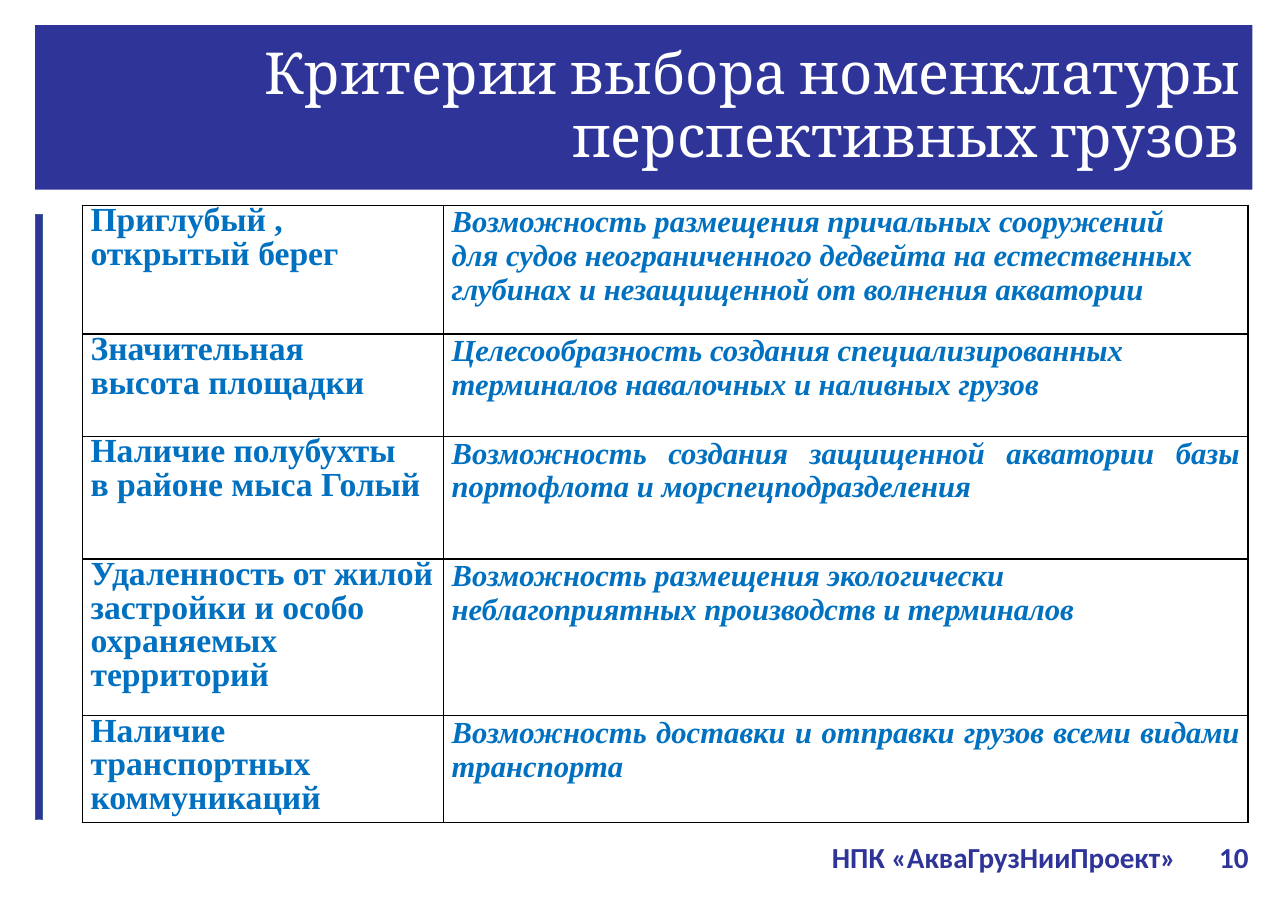
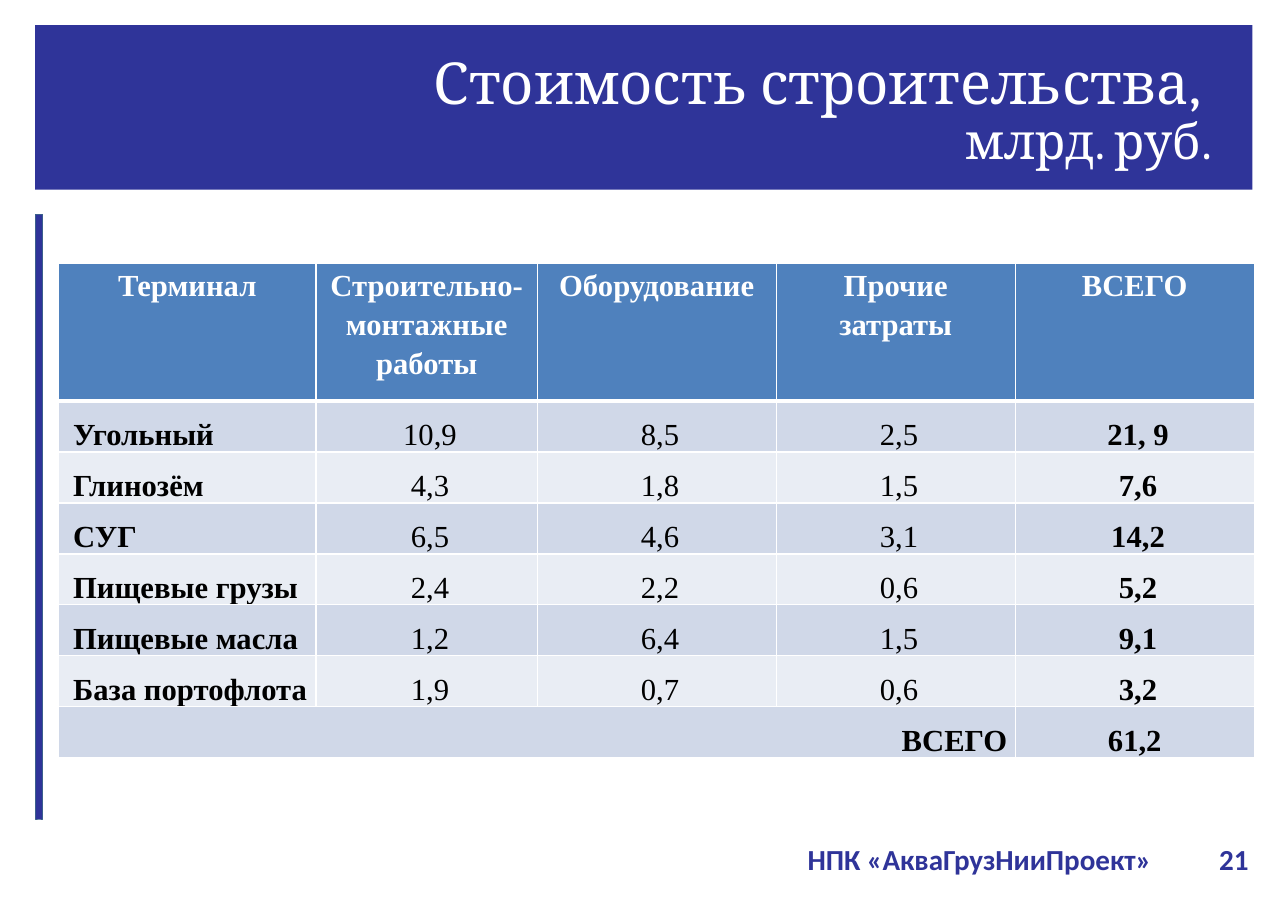
import dataclasses

import pptx
import pptx.dml.color
import pptx.enum.shapes
import pptx.enum.text
import pptx.oxml
import pptx.oxml.ns
import pptx.util

Pt = pptx.util.Pt
ALIGN = pptx.enum.text.PP_ALIGN
ANCHOR = pptx.enum.text.MSO_ANCHOR


@dataclasses.dataclass(frozen=True)
class Theme:
    # Colours
    brand: str = "2F3499"
    bar_edge: str = "3A5F8C"
    white: str = "FFFFFF"
    black: str = "000000"
    criteria: str = "0070C0"
    header: str = "4F81BD"
    bands: tuple = ("D0D8E8", "E9EDF4")
    # Fonts
    title_font: str = "Cambria"
    table_font: str = "Times New Roman"
    footer_font: str = "Calibri"
    # Type sizes
    title_size: float = 37.8
    subtitle_size: float = 32.4
    criterion_size: float = 22
    table_size: float = 20
    footer_size: float = 19


THEME = Theme()
ORGANISATION = "НПК «АкваГрузНииПроект»"


def rgb(color):
    return pptx.dml.color.RGBColor.from_string(color)


def write_text(frame, *paragraphs, font, size, color, bold=False, italic=False,
               align=ALIGN.LEFT, spacing=None, after=None, tabs=()):
    """Fill a frame; a paragraph is a string or a list of (text, size) lines."""
    for number, content in enumerate(paragraphs):
        paragraph = frame.paragraphs[0] if number == 0 else frame.add_paragraph()
        paragraph.alignment = align
        if spacing is not None:
            paragraph.line_spacing = spacing
        if after is not None:
            paragraph.space_after = Pt(after)
        if tabs:
            stops = "".join(f'<a:tab pos="{Pt(stop)}" algn="r"/>' for stop in tabs)
            paragraph._p.get_or_add_pPr().append(pptx.oxml.parse_xml(
                f'<a:tabLst {pptx.oxml.ns.nsdecls("a")}>{stops}</a:tabLst>'))
        lines = [(content, size)] if isinstance(content, str) else content
        for position, (line, line_size) in enumerate(lines):
            if position:
                paragraph.add_line_break()
            run = paragraph.add_run()
            run.text = line
            run.font.name = font
            run.font.size = Pt(line_size)
            run.font.color.rgb = rgb(color)
            run.font.bold = bold
            run.font.italic = italic


class Deck:
    def __init__(self, theme):
        self.theme = theme
        self.presentation = pptx.Presentation()
        self.presentation.slide_width = Pt(841.7)
        self.presentation.slide_height = Pt(595.4)
        self.layout = self.presentation.slide_layouts[5]
        self.slide = None

    def new_slide(self):
        first = self.slide is None
        self.slide = self.presentation.slides.add_slide(self.layout)
        if first:
            self.decorate_layout()

    def decorate_layout(self):
        """Place the title band and the side bar on the shared layout."""
        band = self.rectangle(23, 16.5, 795.5, 107.5)
        bar = self.rectangle(23.3, 140, 4.5, 395.3, edge=self.theme.bar_edge)
        for ornament in (bar, band):
            self.layout.shapes.element.insert(2, ornament.element)

    def rectangle(self, left, top, width, height, edge=None):
        shape = self.slide.shapes.add_shape(
            pptx.enum.shapes.MSO_SHAPE.RECTANGLE,
            Pt(left), Pt(top), Pt(width), Pt(height))
        shape.shadow.inherit = False
        shape.fill.solid()
        shape.fill.fore_color.rgb = rgb(self.theme.brand)
        if edge:
            shape.line.color.rgb = rgb(edge)
            shape.line.width = Pt(0.25)
        else:
            shape.line.fill.background()
        return shape

    def set_frame(self, frame):
        frame.word_wrap = True
        frame.auto_size = pptx.enum.text.MSO_AUTO_SIZE.NONE
        frame.vertical_anchor = ANCHOR.MIDDLE
        frame.margin_left = frame.margin_right = Pt(8)
        frame.margin_top = frame.margin_bottom = Pt(4)

    def title(self, heading, left, top, width, height):
        title = self.slide.shapes.title
        title.left, title.top = Pt(left), Pt(top)
        title.width, title.height = Pt(width), Pt(height)
        self.set_frame(title.text_frame)
        write_text(title.text_frame, heading, font=self.theme.title_font,
                   size=self.theme.title_size, color=self.theme.white,
                   align=ALIGN.RIGHT, spacing=0.9)

    def footer(self, page, top, name_end):
        """Organisation and page number, each ending at a right tab stop."""
        left, width, margin = 480, 344.5, 8
        box = self.slide.shapes.add_textbox(Pt(left), Pt(top), Pt(width), Pt(31.7))
        self.set_frame(box.text_frame)
        write_text(box.text_frame, f"\t{ORGANISATION}\t{page}",
                   font=self.theme.footer_font, size=self.theme.footer_size,
                   color=self.theme.brand, bold=True,
                   tabs=(name_end - left - margin, width - 2 * margin - 0.5))

    def table(self, left, top, widths, heights):
        table = self.slide.shapes.add_table(
            len(heights), len(widths), Pt(left), Pt(top),
            Pt(sum(widths)), Pt(sum(heights))).table
        table.first_row = table.horz_banding = False
        for column, width in zip(table.columns, widths):
            column.width = Pt(width)
        for row, height in zip(table.rows, heights):
            row.height = Pt(height)
        return table

    def cell(self, cell, *paragraphs, border, fill=None, bottom=1, indent=0, **style):
        cell.margin_left, cell.margin_right = Pt(5.2 + indent), Pt(5.2)
        cell.margin_top = cell.margin_bottom = 0
        properties = cell._tc.get_or_add_tcPr()
        for side, weight in (("L", 1), ("R", 1), ("T", 1), ("B", bottom)):
            properties.append(pptx.oxml.parse_xml(
                f'<a:ln{side} {pptx.oxml.ns.nsdecls("a")} w="{Pt(weight)}">'
                f'<a:solidFill><a:srgbClr val="{border}"/></a:solidFill></a:ln{side}>'))
        if fill:
            cell.fill.solid()
            cell.fill.fore_color.rgb = rgb(fill)
        else:
            cell.fill.background()
        write_text(cell.text_frame, *paragraphs, font=self.theme.table_font, **style)


# Content: each criterion with what it makes possible
CRITERIA = [
    (84.2, ["Приглубый ,", "открытый берег"],
     ["Возможность размещения причальных сооружений",
      "для судов неограниченного дедвейта на естественных",
      "глубинах и незащищенной от волнения акватории"]),
    (67, ["Значительная", "высота площадки"],
     ["Целесообразность создания специализированных",
      "терминалов навалочных и наливных грузов"]),
    (80, ["Наличие полубухты", "в районе мыса Голый"],
     ["Возможность создания защищенной акватории базы "
      "портофлота и морспецподразделения"]),
    (102.4, ["Удаленность от жилой", "застройки и особо", "охраняемых", "территорий"],
     ["Возможность размещения экологически",
      "неблагоприятных производств и терминалов"]),
    (69.6, ["Наличие транспортных", "коммуникаций"],
     ["Возможность доставки и отправки грузов всеми видами транспорта"]),
]

# Content: cost by terminal
COST_HEADINGS = ["Терминал", "Строительно-монтажные работы", "Оборудование",
                 [("Прочие", THEME.table_size), ("затраты", THEME.table_size)], "ВСЕГО"]
COSTS = [
    ("Угольный", "10,9", "8,5", "2,5", "21, 9"),
    ("Глинозём", "4,3", "1,8", "1,5", "7,6"),
    ("СУГ", "6,5", "4,6", "3,1", "14,2"),
    ("Пищевые грузы", "2,4", "2,2", "0,6", "5,2"),
    ("Пищевые масла", "1,2", "6,4", "1,5", "9,1"),
    ("База портофлота", "1,9", "0,7", "0,6", "3,2"),
]


def criteria_slide(deck):
    theme = deck.theme
    deck.new_slide()
    deck.title("Критерии выбора номенклатуры перспективных грузов", 22.3, 17.3, 796.3, 105.8)
    criteria = deck.table(54, 134.2, (236, 525.6), [height for height, _, _ in CRITERIA])
    shared = dict(border=theme.black, color=theme.criteria, bold=True, align=ALIGN.JUSTIFY)
    for row, (_, criterion, opportunity) in enumerate(CRITERIA):
        deck.cell(criteria.cell(row, 0), *criterion, size=theme.criterion_size,
                  spacing=Pt(22), **shared)
        deck.cell(criteria.cell(row, 1), *opportunity, size=theme.table_size,
                  italic=True, **shared)
    deck.footer(10, 544.3, name_end=768.5)


def cost_slide(deck):
    theme = deck.theme
    deck.new_slide()
    deck.title([("Стоимость строительства, ", theme.title_size),
                ("млрд. руб.", theme.subtitle_size)], 42.5, 23.8, 757.5, 99.4)
    costs = deck.table(38.3, 172.3, (168.3, 144.5, 156.2, 156.2, 156.2),
                       [89.8] + [33.2] * (len(COSTS) + 1))
    shared = dict(border=theme.white, size=theme.table_size)

    # Header row
    for column, heading in enumerate(COST_HEADINGS):
        deck.cell(costs.cell(0, column), heading, fill=theme.header, bottom=3,
                  color=theme.white, bold=True, align=ALIGN.CENTER, spacing=1.15, **shared)

    # One row for each terminal
    shared.update(color=theme.black, spacing=1.5)
    for row, record in enumerate(COSTS, start=1):
        for column, value in enumerate(record):
            deck.cell(costs.cell(row, column), value, fill=theme.bands[(row - 1) % 2],
                      indent=4.3, bold=column in (0, len(record) - 1),
                      align=ALIGN.CENTER if column else ALIGN.JUSTIFY, **shared)

    # Total row
    total = len(COSTS) + 1
    costs.cell(total, 0).merge(costs.cell(total, 3))
    for column, value, align in ((0, "ВСЕГО", ALIGN.RIGHT), (4, "61,2", ALIGN.CENTER)):
        deck.cell(costs.cell(total, column), value, fill=theme.bands[0], bold=True,
                  align=align, after=10, **shared)
    deck.footer(21, 545.8, name_end=752.5)


def main():
    deck = Deck(THEME)
    criteria_slide(deck)
    cost_slide(deck)
    deck.presentation.save("out.pptx")


if __name__ == "__main__":
    main()
